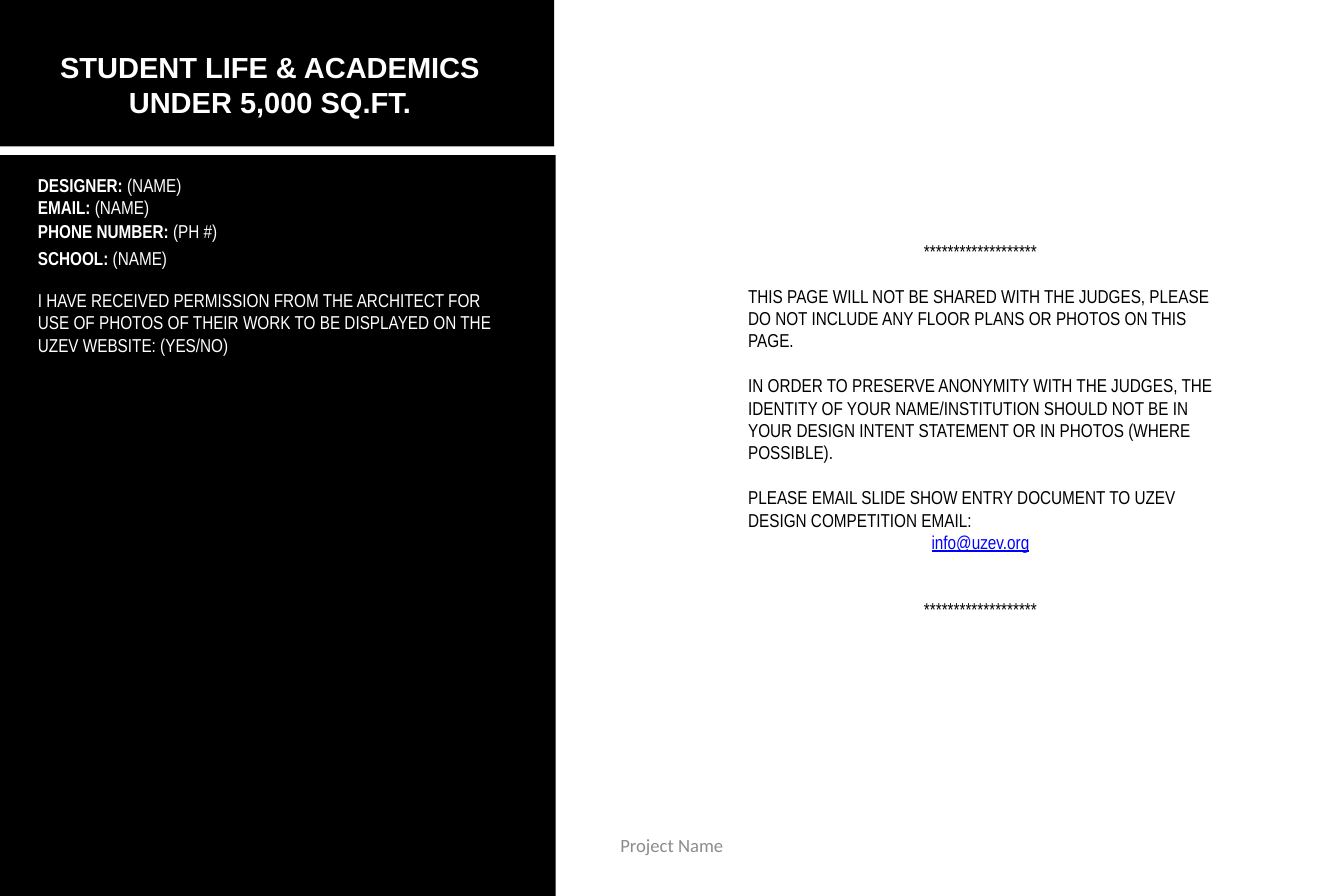
from pptx import Presentation
from pptx.dml.color import RGBColor
from pptx.enum.shapes import MSO_SHAPE as Shape
from pptx.enum.text import MSO_AUTO_SIZE as AutoSize, PP_ALIGN as Align
from pptx.util import Cm, Pt

BLACK = RGBColor(0x00, 0x00, 0x00)
WHITE = RGBColor(0xFF, 0xFF, 0xFF)
GREY = RGBColor(0x8C, 0x8C, 0x8C)
BLUE = RGBColor(0x00, 0x00, 0xFF)

LINE = 21.6  # height of one body line, in points
STARS = "*******************"


class EntryPage:
    """Holds the body style and the page being drawn."""

    font = "Arial Narrow"
    size = 18

    def __init__(self, deck):
        self.page = deck.slides.add_slide(deck.slide_layouts[6])

    def panel(self, top, width, height):
        box = self.page.shapes.add_shape(
            Shape.RECTANGLE, 0, Cm(top), Cm(width), Cm(height))
        box.shadow.inherit = False
        box.fill.solid()
        box.fill.fore_color.rgb = BLACK
        box.line.fill.background()

    def text_box(self, left, top, width, height):
        box = self.page.shapes.add_textbox(Cm(left), Cm(top), Cm(width), Cm(height))
        frame = box.text_frame
        frame.word_wrap = True
        frame.auto_size = AutoSize.SHAPE_TO_FIT_TEXT
        return frame

    def style(self, span, color, bold=False, font=None, size=None):
        span.font.name = font or self.font
        span.font.size = Pt(size or self.size)
        span.font.bold = bold
        span.font.color.rgb = color

    def text(self, place, lines, color, align=Align.LEFT, **style):
        frame = self.text_box(*place)
        frame.text = "\n".join(lines)
        for para in frame.paragraphs:
            para.alignment = align
            for span in para.runs:
                self.style(span, color, **style)
        return frame

    def field(self, place, label, value):
        para = self.text_box(*place).paragraphs[0]
        for words, bold in ((f"{label}: ", True), (value, False)):
            span = para.add_run()
            span.text = words
            self.style(span, WHITE, bold)


def main():
    deck = Presentation()
    deck.slide_width, deck.slide_height = Cm(45.72), Cm(30.48)
    entry = EntryPage(deck)

    # Black panels
    entry.panel(0, 18.85, 4.98)
    entry.panel(5.28, 18.9, 25.2)

    # Category title
    entry.text((0.48, 1.55, 17.4, 2.64),
               ["STUDENT LIFE & ACADEMICS", "UNDER 5,000 SQ.FT."],
               WHITE, Align.CENTER, bold=True, font="Arial", size=28)

    # Contact details and permission
    fields = [
        (5.79, "DESIGNER", "(NAME)"),
        (6.55, "EMAIL", "(NAME)"),
        (7.34, "PHONE NUMBER", "(PH #)"),
        (8.26, "SCHOOL", "(NAME)"),
    ]
    for top, label, value in fields:
        entry.field((1.04, top, 16.31, 1.02), label, value)
    entry.text((1.04, 9.7, 16.31, 2.57),
               ["I HAVE RECEIVED PERMISSION FROM THE ARCHITECT FOR USE OF PHOTOS "
                "OF THEIR WORK TO BE DISPLAYED ON THE UZEV WEBSITE: (YES/NO)"],
               WHITE)

    # Instructions: text, blank lines above, centred or not
    notes = [
        (STARS, 0, True),
        ("THIS PAGE WILL NOT BE SHARED WITH THE JUDGES, PLEASE DO NOT INCLUDE "
         "ANY FLOOR PLANS OR PHOTOS ON THIS PAGE.", 1, False),
        ("IN ORDER TO PRESERVE ANONYMITY WITH THE JUDGES, THE IDENTITY OF YOUR "
         "NAME/INSTITUTION SHOULD NOT BE IN YOUR DESIGN INTENT STATEMENT OR IN "
         "PHOTOS (WHERE POSSIBLE).", 1, False),
        ("PLEASE EMAIL SLIDE SHOW ENTRY DOCUMENT TO UZEV DESIGN COMPETITION "
         "EMAIL:", 1, False),
        ("info@uzev.org", 0, True),
        (STARS, 2, True),
    ]
    frame = entry.text((25.2, 8.03, 16.31, 14.1), [note[0] for note in notes], BLACK)
    for para, (words, gap, centred) in zip(frame.paragraphs, notes):
        para.space_before = Pt(gap * LINE)
        para.alignment = Align.CENTER if centred else Align.LEFT
        if "@" in words:
            para.runs[0].font.color.rgb = BLUE
            para.runs[0].font.underline = True

    # Footer
    footer = entry.text((15.54, 28.35, 14.63, 1.52), ["Project Name"],
                        GREY, Align.CENTER, font="Calibri")
    footer.auto_size = AutoSize.NONE
    footer.margin_left = footer.margin_right = 0
    footer.margin_top = footer.margin_bottom = 0

    deck.save("out.pptx")


if __name__ == "__main__":
    main()
